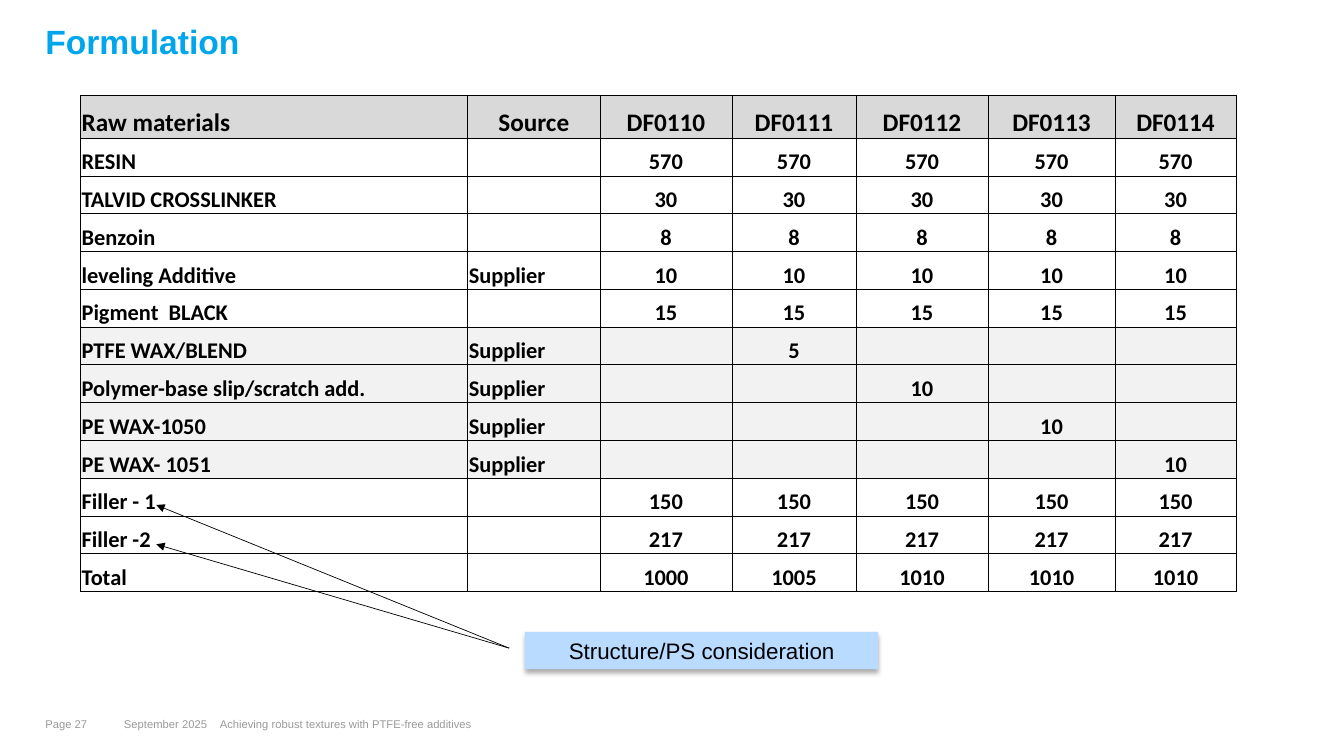
from dataclasses import dataclass
from lxml.etree import SubElement as Sub
from pptx import Presentation
from pptx.dml.color import RGBColor as RGB
from pptx.enum.shapes import MSO_CONNECTOR as Link, MSO_SHAPE as Shape
from pptx.enum.text import MSO_ANCHOR as Anchor, MSO_AUTO_SIZE as Fit, PP_ALIGN as Align
from pptx.oxml.ns import qn
from pptx.util import Pt


@dataclass(frozen=True)
class Theme:
    font: str = "Arial"
    grid: str = "Calibri"
    blue: str = "00A6EB"
    pale: str = "B9DBFF"
    ink: str = "000000"
    gray: str = "999999"
    head: str = "D9D9D9"
    band: str = "F2F2F2"
    title: int = 24
    top: int = 18
    body: int = 16
    foot: int = 8
    rule: float = 0.5


THEME = Theme()
SCALE = 9144
MAKER = "Supplier"
COLS = [384, 131, 131, 123, 131, 126, 120]
HEAD = ["Raw materials", "Source", "DF0110", "DF0111", "DF0112", "DF0113", "DF0114"]
SAME = ("{0} " * 5).format


def row(name, maker, vals):
    return [name, maker, *vals]


def lone(spot, val):
    return [val if i == spot else "" for i in range(5)]


ROWS = [
    row("RESIN", "", SAME(570).split()),
    row("TALVID CROSSLINKER", "", SAME(30).split()),
    row("Benzoin", "", SAME(8).split()),
    row("leveling Additive", MAKER, SAME(10).split()),
    row("Pigment  BLACK", "", SAME(15).split()),
    row("PTFE WAX/BLEND", MAKER, lone(1, "5")),
    row("Polymer-base slip/scratch add.", MAKER, lone(2, "10")),
    row("PE WAX-1050", MAKER, lone(3, "10")),
    row("PE WAX- 1051", MAKER, lone(4, "10")),
    row("Filler - 1", "", SAME(150).split()),
    row("Filler -2", "", SAME(217).split()),
    row("Total", "", ["1000", "1005", "1010", "1010", "1010"]),
]
SHADED = range(6, 10)


def px(*vals):
    return [val * SCALE for val in vals]


def style(par, size, color, bold=False, face=THEME.font):
    font = par.font
    font.name, font.size, font.bold = face, Pt(size), bold
    font.color.rgb = RGB.from_string(color)


def label(slide, box, text, size, color, bold=False, top=0):
    frame = slide.shapes.add_textbox(*px(*box)).text_frame
    frame.word_wrap = True
    frame.margin_left = frame.margin_right = frame.margin_bottom = 0
    frame.margin_top = top * SCALE
    par = frame.paragraphs[0]
    par.text = text
    style(par, size, color, bold)
    return par


def title(slide, box):
    par = label(slide, box, "Formulation", THEME.title, THEME.blue, True, 4)
    par.line_spacing = 0.9


def footer(slide, box):
    left, top, _, high = box
    parts = [
        (0, 68, "Page 27"),
        (78, 87, "September 2025"),
        (173, 898, "Achieving robust textures with PTFE-free additives"),
    ]
    for dx, wide, text in parts:
        label(slide, (left + dx, top, wide, high), text, THEME.foot, THEME.gray)


def border(cell):
    props = cell._tc.get_or_add_tcPr()
    for i, side in enumerate(("lnL", "lnR", "lnT", "lnB")):
        line = props.makeelement(qn("a:" + side), {"w": str(Pt(THEME.rule))})
        fill = Sub(line, qn("a:solidFill"))
        Sub(fill, qn("a:srgbClr"), val=THEME.ink)
        props.insert(i, line)


def fill(cell, text, r, c):
    cell.margin_left = cell.margin_right = cell.margin_top = SCALE
    cell.margin_bottom = 0
    cell.vertical_anchor = Anchor.BOTTOM
    if r == 0 or r in SHADED:
        cell.fill.solid()
        cell.fill.fore_color.rgb = RGB.from_string(THEME.band if r else THEME.head)
    else:
        cell.fill.background()
    border(cell)
    par = cell.text_frame.paragraphs[0]
    par.text = text
    centred = c > 1 or (r == 0 and c == 1)
    par.alignment = Align.CENTER if centred else Align.LEFT
    style(par, THEME.body if r else THEME.top, THEME.ink, True, THEME.grid)


def recipe(slide, box):
    data = [HEAD, *ROWS]
    table = slide.shapes.add_table(len(data), len(COLS), *px(*box)).table
    table.first_row = table.horz_banding = False
    for col, wide in zip(table.columns, COLS):
        col.width = wide * SCALE
    first = 42
    rest = (box[3] - first) * SCALE // len(ROWS)
    for r, texts in enumerate(data):
        table.rows[r].height = rest if r else first * SCALE
        for c, text in enumerate(texts):
            fill(table.cell(r, c), text, r, c)


def arrow(slide, start, end):
    line = slide.shapes.add_connector(Link.STRAIGHT, *px(*start, *end))
    line.line.width = Pt(THEME.rule)
    line.line.color.rgb = RGB.from_string(THEME.ink)
    Sub(line.line._get_or_add_ln(), qn("a:tailEnd"), type="triangle")
    Sub(line._element.spPr, qn("a:effectLst"))


def shade(shape):
    shape.shadow.inherit = False
    glow = shape._element.spPr.find(qn("a:effectLst"))
    cast = Sub(glow, qn("a:outerShdw"), blurRad=str(Pt(3.5)), dist=str(Pt(2.2)),
               dir="5400000", algn="t", rotWithShape="0")
    tint = Sub(cast, qn("a:srgbClr"), val=THEME.ink)
    Sub(tint, qn("a:alpha"), val="32000")


def callout(slide, box):
    left, top, _, _ = box
    for rise in (126, 87):
        arrow(slide, (left - 16, top + 16), (left - 366, top - rise))
    shape = slide.shapes.add_shape(Shape.RECTANGLE, *px(*box))
    shape.fill.solid()
    shape.fill.fore_color.rgb = RGB.from_string(THEME.pale)
    shape.line.fill.background()
    shade(shape)
    frame = shape.text_frame
    frame.word_wrap = True
    frame.auto_size = Fit.SHAPE_TO_FIT_TEXT
    frame.vertical_anchor = Anchor.TOP
    par = frame.paragraphs[0]
    par.text = "Structure/PS consideration"
    par.alignment = Align.CENTER
    style(par, THEME.body, THEME.ink)


def main():
    deck = Presentation()
    deck.slide_width, deck.slide_height = px(1333, 750)
    slide = deck.slides.add_slide(deck.slide_layouts[6])
    title(slide, (45, 21, 1244, 110))
    footer(slide, (45, 712, 1071, 16))
    recipe(slide, (80, 95, sum(COLS), 492))
    callout(slide, (521, 627, 350, 37))
    deck.save("out.pptx")


if __name__ == "__main__":
    main()
